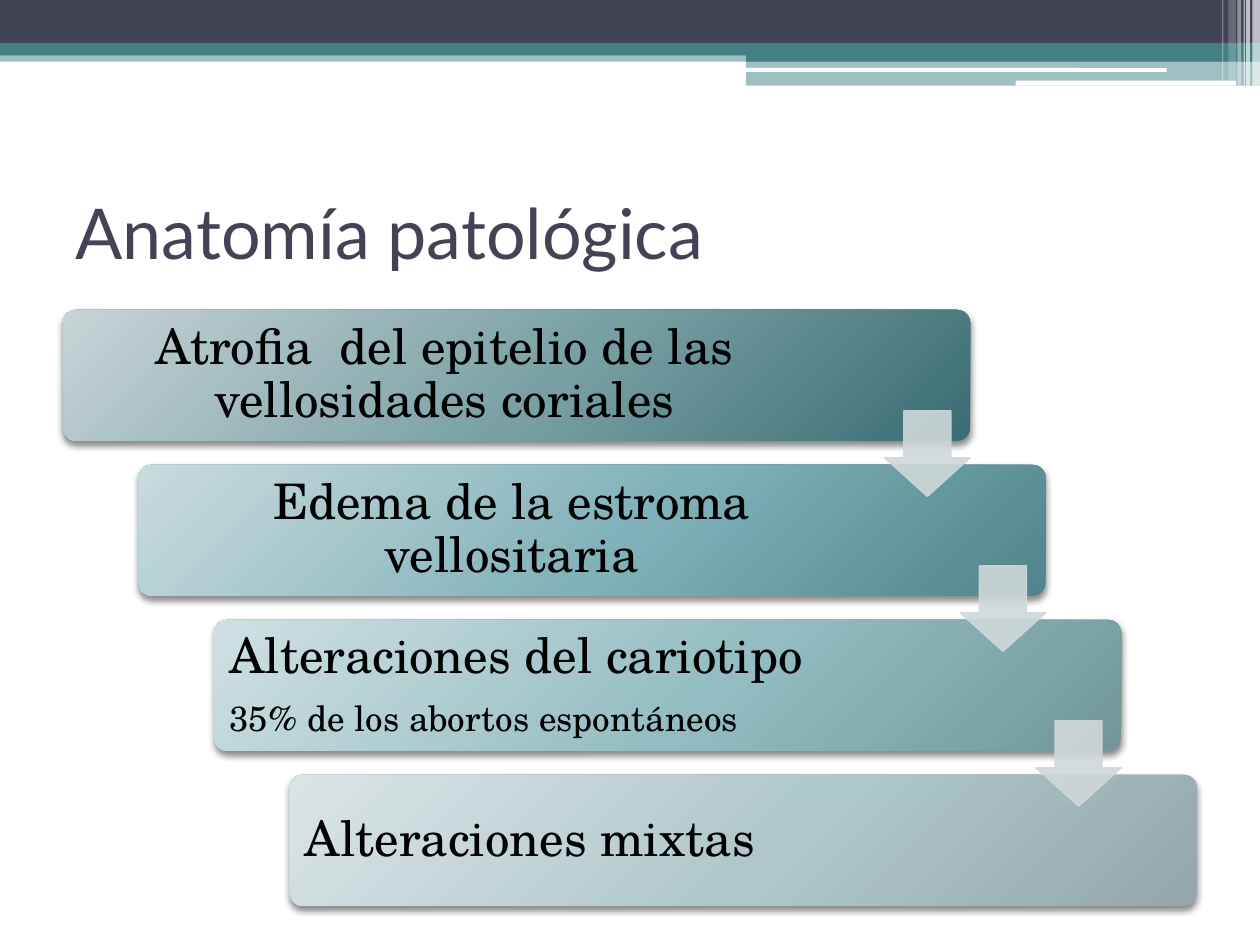
from pptx import Presentation
from pptx.dml.color import RGBColor
from pptx.enum.shapes import MSO_SHAPE as Preset
from pptx.enum.text import MSO_ANCHOR as Anchor, PP_ALIGN as Align
from pptx.oxml import parse_xml
from pptx.oxml.ns import nsdecls, qn
from pptx.util import Inches, Pt

NAVY = RGBColor(0x42, 0x44, 0x56)
TEAL = RGBColor(0x43, 0x80, 0x86)
WHITE = RGBColor(0xFF, 0xFF, 0xFF)
BLACK = RGBColor(0x00, 0x00, 0x00)
PALE = RGBColor(0xCF, 0xD8, 0xD9)
STEP_SHADES = [
    (RGBColor(0xC7, 0xD4, 0xD6), RGBColor(0x77, 0x9F, 0xA4), RGBColor(0x39, 0x6C, 0x71)),
    (RGBColor(0xC9, 0xDB, 0xDE), RGBColor(0x7F, 0xB1, 0xB8), RGBColor(0x50, 0x85, 0x8B)),
    (RGBColor(0xCF, 0xE0, 0xE2), RGBColor(0x93, 0xBD, 0xC2), RGBColor(0x71, 0x97, 0x9B)),
    (RGBColor(0xDA, 0xE4, 0xE6), RGBColor(0xAF, 0xC7, 0xCA), RGBColor(0x94, 0xA7, 0xAA)),
]

HEADER_BANDS = [
    (0, 0.4, 10, 0.09, TEAL, 50),
    (0, 0, 10, 0.34, NAVY, 100),
    (0, 0.34, 10, 0.1, TEAL, 100),
    (5.92, 0.39, 4.08, 0.1, TEAL, 100),
    (5.92, 0.48, 4.08, 0.2, TEAL, 50),
]
HEADER_LINES = [(5.91, 0.54, 3.35, 0.03), (8.06, 0.64, 1.75, 0.04)]
EDGE_STRIPES = [
    (9.94, 0.06, 0.68, 65),
    (9.89, 0.03, 0.68, 65),
    (9.87, 0.01, 0.68, 60),
    (9.82, 0.03, 0.68, 40),
    (9.75, 0.06, 0.64, 20),
    (9.7, 0.01, 0.64, 30),
]

STEPS = [
    ([("Atrofia  del epitelio de las vellosidades coriales", 28)], Align.CENTER, 6.05),
    ([("Edema de la estroma vellositaria", 28)], Align.CENTER, 5.92),
    ([("Alteraciones del cariotipo", 28), ("35% de los abortos espontáneos", 20)], Align.LEFT, 5.93),
    ([("Alteraciones mixtas", 28)], Align.LEFT, 5.92),
]
STEP_LEFT, STEP_TOP = 0.5, 2.46
STEP_WIDTH, STEP_HEIGHT = 7.2, 1.04
SHIFT_X, SHIFT_Y = 0.6, 1.23
ARROW_SIZE, ARROW_DROP = 0.68, 0.8


def write(paragraph, text, *, font, size, color, align=Align.LEFT, line=None, after=None):
    paragraph.alignment = align
    if line is not None:
        paragraph.line_spacing = line
    if after is not None:
        paragraph.space_after = Pt(after)
    run = paragraph.add_run()
    run.text = text
    run.font.name = font
    run.font.size = Pt(size)
    run.font.color.rgb = color


class Deck:
    heading_font = "Lato"
    body_font = "TeX Gyre Schola"

    def __init__(self):
        self.presentation = Presentation()
        self.presentation.slide_width = Inches(10)
        self.presentation.slide_height = Inches(7.5)
        self.slide = self.presentation.slides.add_slide(self.presentation.slide_layouts[5])

    def title(self, text, left, top, width, height):
        heading = self.slide.shapes.title
        heading.left, heading.top = Inches(left), Inches(top)
        heading.width, heading.height = Inches(width), Inches(height)
        heading.text_frame.vertical_anchor = Anchor.MIDDLE
        write(heading.text_frame.paragraphs[0], text, font=self.heading_font, size=40, color=NAVY)

    def block(self, left, top, width, height, color, alpha=100, preset=Preset.RECTANGLE,
              adjust=(), outline=None):
        block = self.slide.shapes.add_shape(
            preset, Inches(left), Inches(top), Inches(width), Inches(height))
        block.shadow.inherit = False
        for index, value in enumerate(adjust):
            block.adjustments[index] = value
        block.fill.solid()
        block.fill.fore_color.rgb = color
        if outline is None:
            block.line.fill.background()
        else:
            block.line.color.rgb = color
            block.line.width = Pt(outline)
        if alpha < 100:
            for tint in block._element.spPr.iter(qn("a:srgbClr")):
                tint.append(parse_xml(f'<a:alpha {nsdecls("a")} val="{alpha * 1000}"/>'))
        return block

    def card(self, left, top, width, height, shades):
        card = self.block(left, top, width, height, shades[0],
                          preset=Preset.ROUNDED_RECTANGLE, adjust=[0.1])
        stops = "".join(
            f'<a:gs pos="{position * 1000}"><a:srgbClr val="{shade}"/></a:gs>'
            for position, shade in zip((0, 55, 100), shades))
        properties = card._element.spPr
        properties.replace(properties.find(qn("a:solidFill")), parse_xml(
            f'<a:gradFill {nsdecls("a")} rotWithShape="1"><a:gsLst>{stops}</a:gsLst>'
            '<a:path path="circle"><a:fillToRect l="-40000" t="-90000" r="140000" b="190000"/>'
            '</a:path></a:gradFill>'))
        properties.find(qn("a:effectLst")).append(parse_xml(
            f'<a:outerShdw {nsdecls("a")} blurRad="{Pt(4)}" dist="{Pt(2)}" dir="5400000" '
            'rotWithShape="0"><a:srgbClr val="000000"><a:alpha val="45000"/></a:srgbClr>'
            '</a:outerShdw>'))

    def caption(self, left, top, width, height, lines, align):
        frame = self.slide.shapes.add_textbox(
            Inches(left), Inches(top), Inches(width), Inches(height)).text_frame
        frame.word_wrap = True
        frame.vertical_anchor = Anchor.MIDDLE
        frame.margin_left = frame.margin_right = Inches(0.12)
        frame.margin_top = frame.margin_bottom = Inches(0.12)
        for index, (text, size) in enumerate(lines):
            paragraph = frame.add_paragraph() if index else frame.paragraphs[0]
            write(paragraph, text, font=self.body_font, size=size, color=BLACK,
                  align=align, line=0.9, after=size * 0.35)

    def arrow(self, left, top):
        self.block(left, top, ARROW_SIZE, ARROW_SIZE, PALE, 90,
                   preset=Preset.DOWN_ARROW, adjust=[0.55, 0.45], outline=0.75)

    def save(self):
        self.presentation.save("out.pptx")


def main():
    deck = Deck()
    for band in HEADER_BANDS:
        deck.block(*band)
    for header_line in HEADER_LINES:
        deck.block(*header_line, WHITE, preset=Preset.ROUNDED_RECTANGLE)
    for left, width, height, alpha in EDGE_STRIPES:
        deck.block(left, 0, width, height, WHITE, alpha)

    deck.title("Anatomía patológica", 0.5, 1.25, 9, 1.17)

    corners = [(STEP_LEFT + SHIFT_X * i, STEP_TOP + SHIFT_Y * i) for i in range(len(STEPS))]
    for (left, top), (lines, align, text_width), shades in zip(corners, STEPS, STEP_SHADES):
        deck.card(left, top, STEP_WIDTH, STEP_HEIGHT, shades)
        deck.caption(left, top, text_width, STEP_HEIGHT, lines, align)
    for left, top in corners[:-1]:
        deck.arrow(left + STEP_WIDTH - ARROW_SIZE, top + ARROW_DROP)
    deck.save()


if __name__ == "__main__":
    main()
